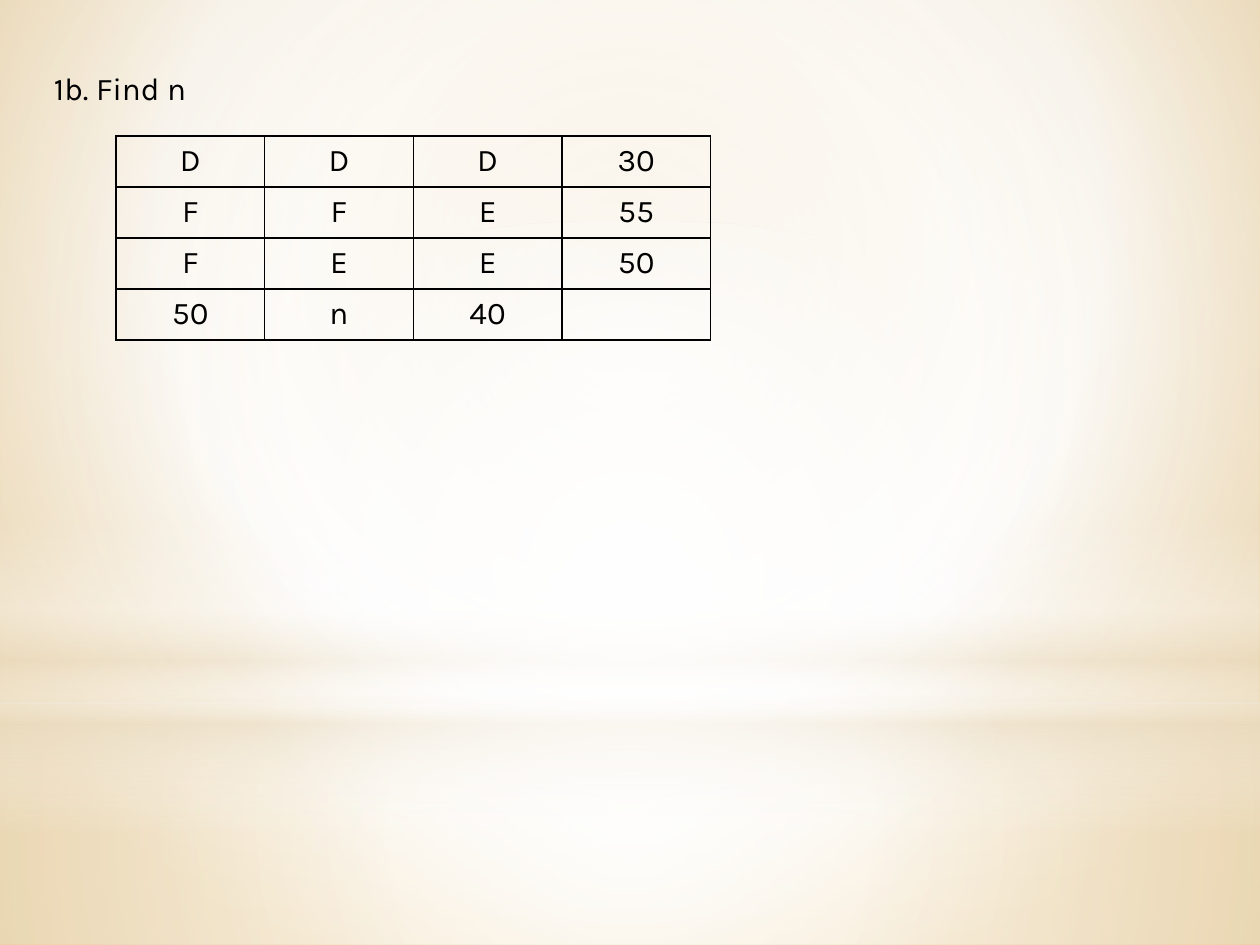
from lxml.etree import SubElement
from pptx import Presentation
from pptx.dml.color import RGBColor
from pptx.enum.shapes import MSO_SHAPE
from pptx.enum.text import MSO_AUTO_SIZE, PP_ALIGN
from pptx.oxml.ns import qn
from pptx.util import Inches, Pt

BLACK = RGBColor(0x00, 0x00, 0x00)
WHITE = RGBColor(0xFF, 0xFF, 0xFF)
CREAM = RGBColor(0xEB, 0xDD, 0xC3)
SAND = RGBColor(0xEC, 0xD7, 0xB0)
GOLD = RGBColor(0xE6, 0xBE, 0x74)

COLUMNS, ROWS = 100, 75
CENTRE = (50, 50, 50, 50)

PUZZLE = (
    ("D", "D", "D", "30"),
    ("F", "F", "E", "55"),
    ("F", "E", "E", "50"),
    ("50", "n", "40", ""),
)


class SlideBuilder:
    """Style and current slide; boxes are (left, top, width, height) in grid units."""

    font = {"name": "Karla", "size": Pt(18)}
    border_width = Pt(1)

    def __init__(self, presentation):
        self.slide = presentation.slides.add_slide(presentation.slide_layouts[6])
        self.column = presentation.slide_width / COLUMNS
        self.row = presentation.slide_height / ROWS

    def place(self, box):
        units = (self.column, self.row) * 2
        return [round(length * unit) for length, unit in zip(box, units)]

    def paint_gradient(self, owner, fill, stops, focus=None):
        """Fill with (position, colour, opacity) stops, around a focus or downwards."""
        fill.gradient()
        gradient = owner.element.find(".//" + qn("a:gradFill"))
        gradient.clear()
        stop_list = SubElement(gradient, qn("a:gsLst"))
        for position, colour, opacity in stops:
            stop = SubElement(stop_list, qn("a:gs"), pos=str(position * 1000))
            tint = SubElement(stop, qn("a:srgbClr"), val=str(colour))
            if opacity < 100:
                SubElement(tint, qn("a:alpha"), val=str(opacity * 1000))
        if focus:
            circle = SubElement(gradient, qn("a:path"), path="circle")
            sides = {side: str(share * 1000) for side, share in zip("ltrb", focus)}
            SubElement(circle, qn("a:fillToRect"), **sides)
        else:
            SubElement(gradient, qn("a:lin"), ang="5400000", scaled="0")

    def background(self, stops, focus):
        self.paint_gradient(self.slide, self.slide.background.fill, stops, focus)

    def glow(self, kind, box, stops, focus=None):
        shape = self.slide.shapes.add_shape(kind, *self.place(box))
        shape.shadow.inherit = False
        shape.line.fill.background()
        self.paint_gradient(shape, shape.fill, stops, focus)

    def set_text(self, paragraph, text, alignment=PP_ALIGN.LEFT):
        paragraph.text = text
        paragraph.alignment = alignment
        for font in (paragraph.font, *(run.font for run in paragraph.runs)):
            for name, value in self.font.items():
                setattr(font, name, value)
            font.color.rgb = BLACK

    def text(self, box, text):
        frame = self.slide.shapes.add_textbox(*self.place(box)).text_frame
        frame.word_wrap = True
        frame.auto_size = MSO_AUTO_SIZE.SHAPE_TO_FIT_TEXT
        self.set_text(frame.paragraphs[0], text)

    def table(self, box, rows):
        size = len(rows), len(rows[0])
        table = self.slide.shapes.add_table(*size, *self.place(box)).table
        table.first_row = table.horz_banding = False
        for row, values in zip(table.rows, rows):
            for cell, value in zip(row.cells, values):
                self.set_text(cell.text_frame.paragraphs[0], value, PP_ALIGN.CENTER)
                self.outline(cell)
                cell.fill.background()

    def outline(self, cell):
        properties = cell._tc.get_or_add_tcPr()
        for side in "LRTB":
            line = SubElement(properties, qn(f"a:ln{side}"), w=str(int(self.border_width)))
            fill = SubElement(line, qn("a:solidFill"))
            SubElement(fill, qn("a:srgbClr"), val=str(BLACK))


def main():
    presentation = Presentation()
    presentation.slide_width = Inches(10)
    presentation.slide_height = Inches(7.5)
    builder = SlideBuilder(presentation)

    builder.background(
        [(0, SAND, 100), (60, WHITE, 100), (100, GOLD, 100)], (20, 10, 20, 60))
    horizon = 55.8
    builder.glow(
        MSO_SHAPE.RECTANGLE, (0, horizon, COLUMNS, ROWS - horizon),
        [(0, WHITE, 91), (37, WHITE, 76), (100, CREAM, 79)], CENTRE)
    builder.glow(
        MSO_SHAPE.RECTANGLE, (0, 0, COLUMNS, horizon),
        [(0, WHITE, 89), (48, WHITE, 62), (100, CREAM, 79)], CENTRE)
    builder.glow(
        MSO_SHAPE.RECTANGLE, (0, 41.2, COLUMNS, 25),
        [(0, WHITE, 0), (29, WHITE, 30), (45, CREAM, 40),
         (55, WHITE, 26), (65, CREAM, 60), (100, WHITE, 0)])
    builder.glow(
        MSO_SHAPE.OVAL, (0, 17.5, COLUMNS, horizon),
        [(0, WHITE, 100), (56, WHITE, 0)], CENTRE)

    builder.text((3.3, 5, 95, 4), "1b. Find n")
    builder.table((9.2, 10.8, 47.2, 16.2), PUZZLE)
    presentation.save("out.pptx")


if __name__ == "__main__":
    main()
